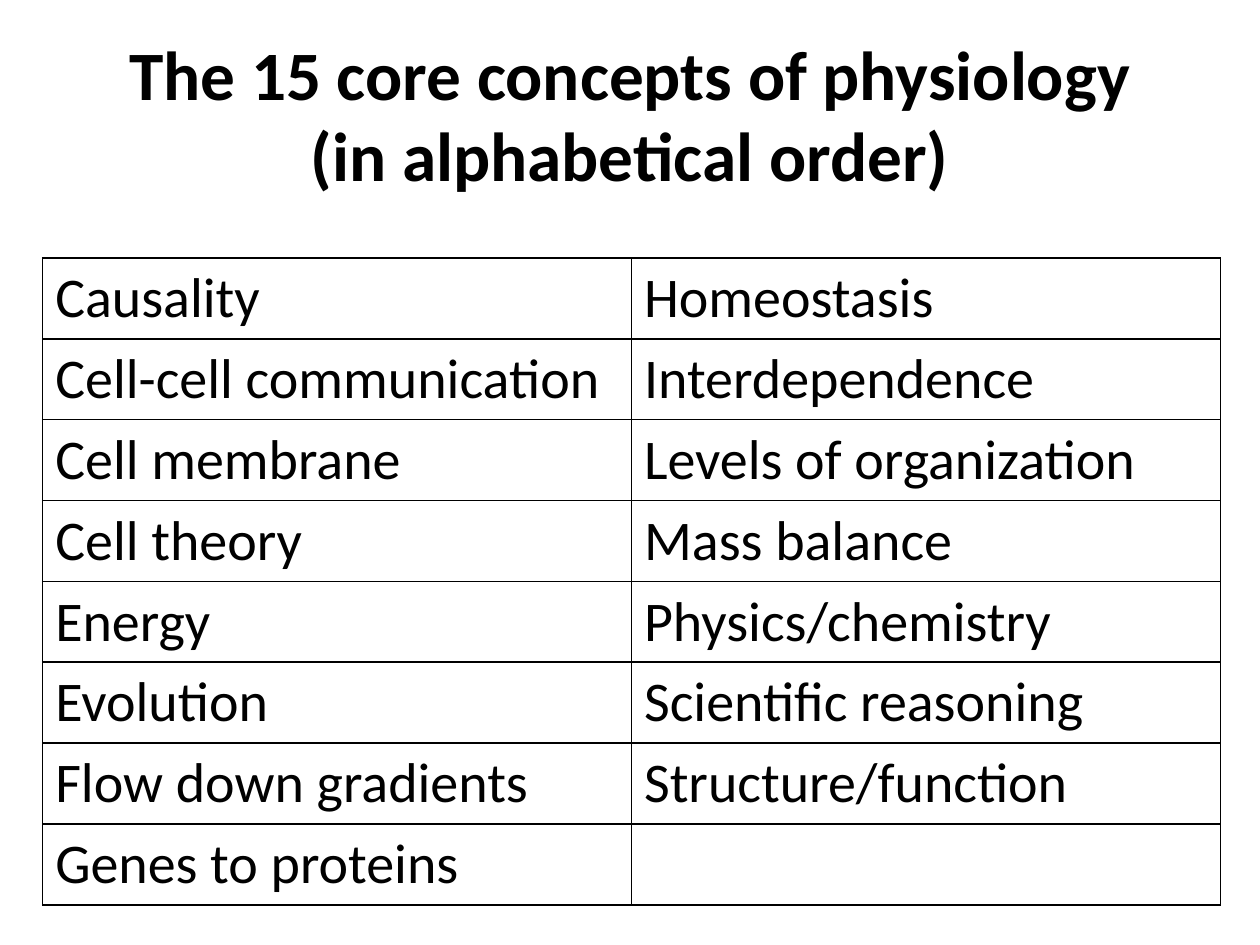
from itertools import zip_longest

from lxml import etree
from pptx import Presentation
from pptx.dml.color import RGBColor
from pptx.enum import text
from pptx.oxml import ns
from pptx.util import Cm, Pt

BLACK = RGBColor(0, 0, 0)
TITLE = "The 15 core concepts of physiology\v(in alphabetical order)"
CONCEPTS = [
    "Causality", "Cell-cell communication", "Cell membrane", "Cell theory",
    "Energy", "Evolution", "Flow down gradients", "Genes to proteins",
    "Homeostasis", "Interdependence", "Levels of organization", "Mass balance",
    "Physics/chemistry", "Scientific reasoning", "Structure/function",
]
ROWS = 8


class SlideBuilder:
    def __init__(self, page):
        self.page = page
        self.base = {"name": "Calibri"}

    def fill_para(self, para, words, **style):
        para.text = words
        for font in [para.font] + [span.font for span in para.runs]:
            for name, value in {**self.base, **style}.items():
                setattr(font, name, value)
            font.color.rgb = BLACK

    def title(self, words, left, top, width, height):
        box = self.page.shapes.add_textbox(Cm(left), Cm(top), Cm(width), Cm(height))
        frame = box.text_frame
        frame.word_wrap = True
        frame.vertical_anchor = text.MSO_ANCHOR.MIDDLE
        para = frame.paragraphs[0]
        para.alignment = text.PP_ALIGN.CENTER
        para.line_spacing = 0.97
        self.fill_para(para, words, size=Pt(39.6), bold=True)

    def table(self, rows, left, top, width, row_height):
        frame = self.page.shapes.add_table(
            len(rows), len(rows[0]), Cm(left), Cm(top),
            Cm(width), Cm(row_height * len(rows)))
        grid = frame.table
        grid.first_row = grid.horz_banding = False
        for row, entries in zip(grid.rows, rows):
            for cell, words in zip(row.cells, entries):
                cell.fill.background()
                self.fill_para(cell.text_frame.paragraphs[0], words,
                               size=Pt(32), bold=False)
                self.borders(cell)

    def borders(self, cell):
        """Draw a thin black line on all four sides of the cell."""
        properties = cell._tc.get_or_add_tcPr()
        for position, side in enumerate(("lnL", "lnR", "lnT", "lnB")):
            line = etree.Element(ns.qn(f"a:{side}"), w=str(Pt(1)))
            fill = etree.SubElement(line, ns.qn("a:solidFill"))
            etree.SubElement(fill, ns.qn("a:srgbClr"), val=str(BLACK))
            properties.insert(position, line)


def main():
    deck = Presentation()
    deck.slide_width, deck.slide_height = Cm(25.4), Cm(19.05)
    builder = SlideBuilder(deck.slides.add_slide(deck.slide_layouts[6]))
    builder.title(TITLE, 1.27, 0.76, 22.86, 3.18)
    pairs = list(zip_longest(CONCEPTS[:ROWS], CONCEPTS[ROWS:], fillvalue=""))
    builder.table(pairs, 0.86, 5.2, 23.74, 1.63)
    deck.save("out.pptx")


if __name__ == "__main__":
    main()
